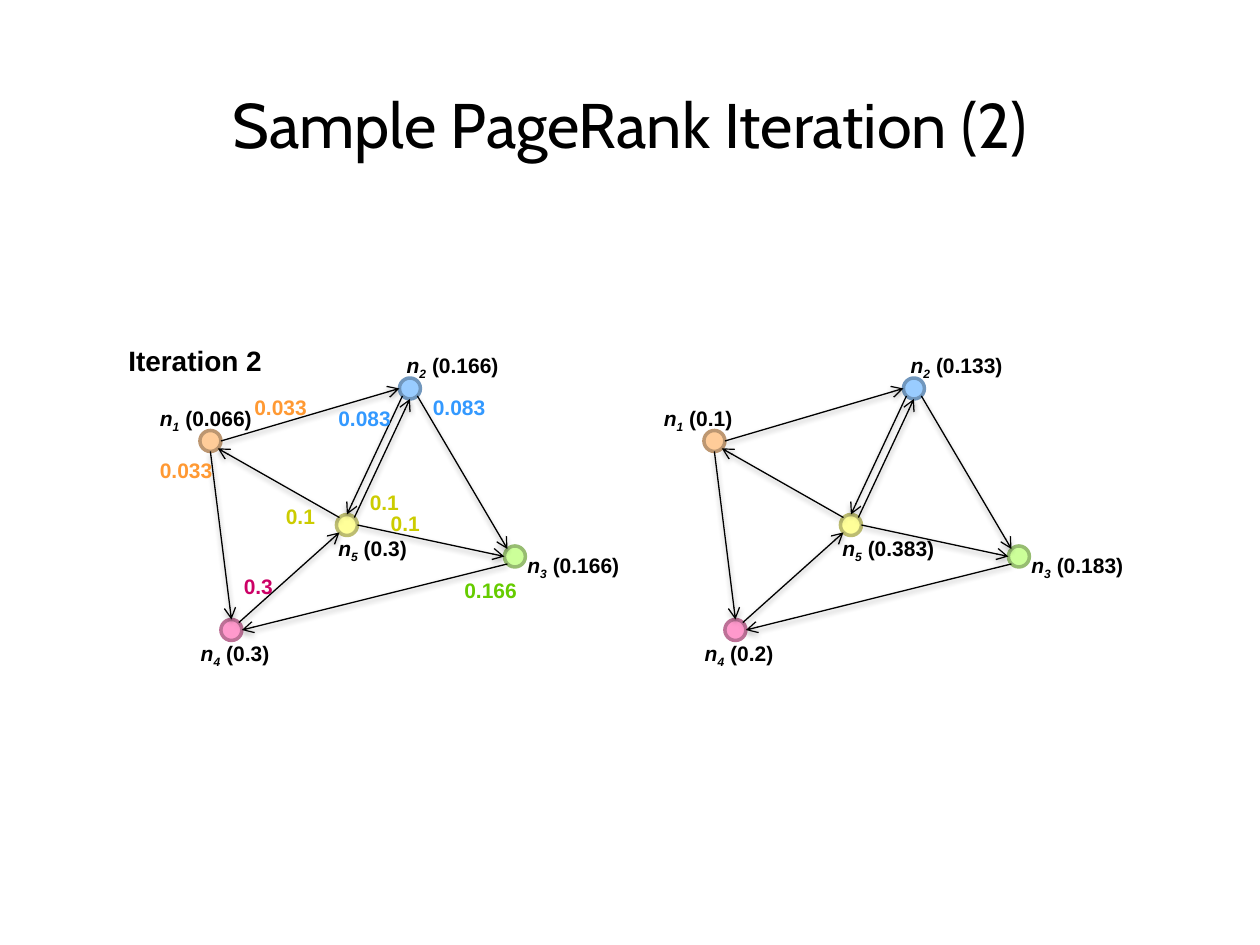
from math import cos, radians, sin

from lxml.etree import SubElement
from pptx import Presentation
from pptx.dml.color import RGBColor
from pptx.enum.shapes import MSO_CONNECTOR as Conn, MSO_SHAPE as Shape
from pptx.enum.text import MSO_ANCHOR as Anchor, MSO_AUTO_SIZE as Fit, PP_ALIGN as Align
from pptx.oxml import parse_xml
from pptx.oxml.ns import nsdecls, qn
from pptx.util import Inches, Pt

WIDE, HIGH = 10, 7.5
UNIT = 1 / 12
BLACK = RGBColor(0x00, 0x00, 0x00)
ORANGE = RGBColor(0xFF, 0x99, 0x33)
BLUE = RGBColor(0x33, 0x99, 0xFF)
GREEN = RGBColor(0x66, 0xCC, 0x00)
PINK = RGBColor(0xCC, 0x00, 0x66)
YELLOW = RGBColor(0xCC, 0xCC, 0x00)

NODES = {
    1: (6, 9, RGBColor(0xFF, 0xCC, 0x99), RGBColor(0xBD, 0x97, 0x71)),
    2: (25, 4, RGBColor(0x99, 0xCC, 0xFF), RGBColor(0x71, 0x97, 0xBD)),
    4: (8, 27, RGBColor(0xFF, 0x99, 0xCC), RGBColor(0xBD, 0x71, 0x97)),
    3: (35, 20, RGBColor(0xCC, 0xFF, 0x99), RGBColor(0x97, 0xBD, 0x71)),
    5: (19, 17, RGBColor(0xFF, 0xFF, 0x99), RGBColor(0xBD, 0xBD, 0x71)),
}
ANGLES = {"E": 0, "SE": 45, "S": 90, "SW": 135, "W": 180, "NW": 225, "N": 270, "NE": 315}
EDGES = [
    (1, "E", 2, "W"), (5, "NW", 1, "SE"), (1, "S", 4, "N"),
    (4, "NE", 5, "SW"), (5, "NE", 2, "S"), (2, "SE", 3, "NW"),
    (5, "E", 3, "W"), (3, "SW", 4, "E"), (2, "SW", 5, "N"),
]
LABELS = {1: (0, 5), 4: (3.9, 27.4), 3: (35, 19), 5: (17, 17.4), 2: (23.5, 0)}
FLOWS = [
    ("0.033", 9, 4, ORANGE), ("0.033", 0, 10, ORANGE), ("0.3", 8, 21, PINK),
    ("0.166", 29, 21.4, GREEN), ("0.083", 17, 5, BLUE), ("0.083", 26, 4, BLUE),
    ("0.1", 12, 14.4, YELLOW), ("0.1", 22, 15, YELLOW), ("0.1", 20, 13, YELLOW),
]
GRAPHS = [
    (1.17, 2.75, {1: "0.066", 2: "0.166", 3: "0.166", 4: "0.3", 5: "0.3"}, FLOWS),
    (5.17, 2.75, {1: "0.1", 2: "0.133", 3: "0.183", 4: "0.2", 5: "0.383"}, []),
]
SHADOW = (
    f'<a:effectLst {nsdecls("a")}><a:outerShdw blurRad="{Pt(3.1)}" dist="{Pt(1.6)}" '
    'dir="5400000" rotWithShape="0"><a:srgbClr val="000000"><a:alpha val="38000"/>'
    '</a:srgbClr></a:outerShdw></a:effectLst>'
)


def add_text(shapes, parts, left, top, width, height=0.3, size=12, color=BLACK):
    """Add a bold unwrapped line of text and return its runs."""
    box = shapes.add_textbox(*map(Inches, (left, top, width, height)))
    frame = box.text_frame
    frame.word_wrap = False
    frame.auto_size = Fit.SHAPE_TO_FIT_TEXT
    line = frame.paragraphs[0]
    for part in parts:
        run = line.add_run()
        run.text = part
        font = run.font
        font.name, font.size, font.bold = "Arial", Pt(size), True
        font.color.rgb = color
    return line.runs


def add_node(shapes, x, y, fill, edge):
    """Add a round node centred at x, y."""
    dot = shapes.add_shape(Shape.OVAL, Inches(x - UNIT), Inches(y - UNIT),
                           Inches(2 * UNIT), Inches(2 * UNIT))
    dot.shadow.inherit = False
    dot.fill.solid()
    dot.fill.fore_color.rgb = fill
    dot.line.color.rgb = edge
    dot.line.width = Pt(2)


def add_edge(shapes, start, end):
    """Add a thin arrow with a soft shadow from start to end."""
    link = shapes.add_connector(Conn.STRAIGHT, *map(Inches, (*start, *end)))
    link.line.color.rgb = BLACK
    link.line.width = Pt(0.75)
    SubElement(link.line._get_or_add_ln(), qn("a:tailEnd"), type="arrow")
    link._element.spPr.append(parse_xml(SHADOW))


def add_label(shapes, node, rank, left, top):
    """Add a node name with its number lowered and its rank."""
    parts = ["n", str(node), f" ({rank})"]
    name, index, _ = add_text(shapes, parts, left, top, 0.095 * len("".join(parts)))
    name.font.italic = index.font.italic = True
    index.font._element.set("baseline", "-25000")


def add_graph(slide, left, top, ranks, flows):
    """Draw one ranked graph on a grid that starts at left, top."""
    shapes = slide.shapes.add_group_shape().shapes

    def place(col, row):
        """Turn a grid cell into inches."""
        return left + col * UNIT, top + row * UNIT

    def port(node, side):
        """Find the point on the rim of a node at the given side."""
        angle = radians(ANGLES[side])
        col, row = NODES[node][:2]
        return place(col + cos(angle), row + sin(angle))

    for col, row, fill, edge in NODES.values():
        add_node(shapes, *place(col, row), fill, edge)
    for tail, out, head, into in EDGES:
        add_edge(shapes, port(tail, out), port(head, into))
    for node, cell in LABELS.items():
        add_label(shapes, node, ranks[node], *place(*cell))
    for flow, col, row, color in flows:
        add_text(shapes, [flow], *place(col, row), 0.17 + 0.09 * len(flow), color=color)


def add_title(slide, text):
    """Place and format the slide title."""
    title = slide.shapes.title
    title.left, title.top = 0, Inches(0.08 * HIGH)
    title.width, title.height = Inches(WIDE), Inches(0.1 * HIGH)
    frame = title.text_frame
    frame.text = text
    frame.vertical_anchor = Anchor.MIDDLE
    line = frame.paragraphs[0]
    line.alignment = Align.CENTER
    font = line.runs[0].font
    font.name, font.size, font.color.rgb = "Cabin", Pt(36), BLACK


def main():
    """Build and save the slide."""
    deck = Presentation()
    deck.slide_width, deck.slide_height = Inches(WIDE), Inches(HIGH)
    slide = deck.slides.add_slide(deck.slide_layouts[5])
    add_title(slide, "Sample PageRank Iteration (2)")
    for graph in GRAPHS:
        add_graph(slide, *graph)
    add_text(slide.shapes, ["Iteration 2"], 0.92, 2.68, 1.28, 0.37, 16)
    deck.save("out.pptx")


if __name__ == "__main__":
    main()
